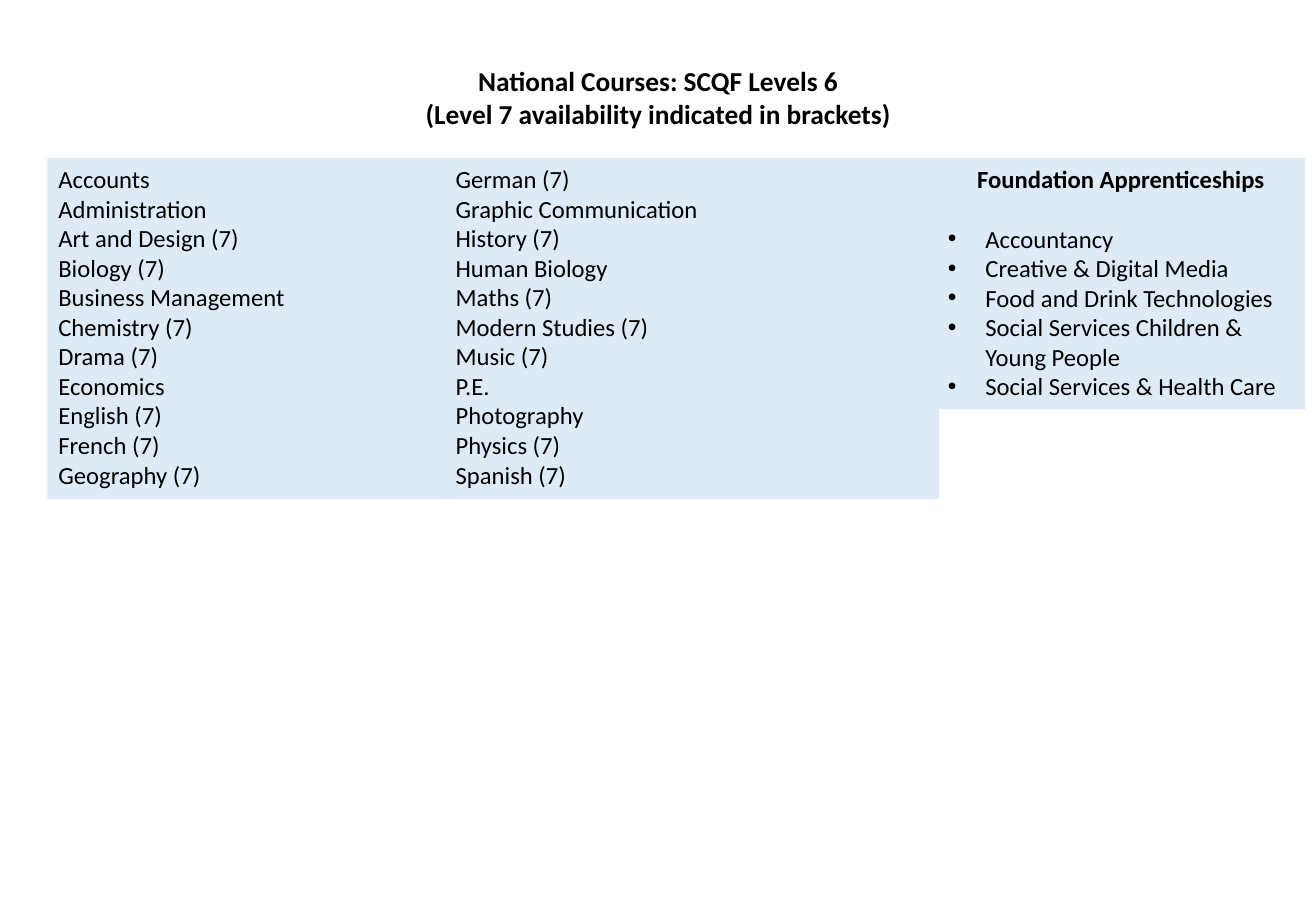
import pptx
import pptx.dml.color
import pptx.enum.shapes
import pptx.enum.text
import pptx.util
import lxml.etree
from pptx.oxml.ns import qn

Inches = pptx.util.Inches
Pt = pptx.util.Pt
CENTER = pptx.enum.text.PP_ALIGN.CENTER

BLACK = pptx.dml.color.RGBColor(0x00, 0x00, 0x00)
PALE_BLUE = pptx.dml.color.RGBColor(0xDE, 0xEB, 0xF7)
FONT = "Calibri"
TITLE_SIZE = 16.2
BODY_SIZE = 14.6

TITLE_LINES = [
    "National Courses: SCQF Levels 6",
    "(Level 7 availability indicated in brackets)",
]
COURSES_A_TO_G = [
    "Accounts", "Administration", "Art and Design (7)", "Biology (7)",
    "Business Management", "Chemistry (7)", "Drama (7)", "Economics",
    "English (7)", "French (7)", "Geography (7)",
]
COURSES_G_TO_S = [
    "German (7)", "Graphic Communication", "History (7)", "Human Biology",
    "Maths (7)", "Modern Studies (7)", "Music (7)", "P.E.", "Photography",
    "Physics (7)", "Spanish (7)",
]
APPRENTICESHIPS = [
    "Accountancy", "Creative & Digital Media", "Food and Drink Technologies",
    "Social Services Children & Young People",
    "Social Services & Health Care",
]


def prepare_frame(shape):
    frame = shape.text_frame
    frame.word_wrap = True
    frame.vertical_anchor = pptx.enum.text.MSO_ANCHOR.TOP
    frame.margin_left = frame.margin_right = Inches(0.09)
    frame.margin_top = frame.margin_bottom = Inches(0.05)
    return frame


def add_panel(slide, box):
    shape = slide.shapes.add_shape(
        pptx.enum.shapes.MSO_SHAPE.RECTANGLE, *map(Inches, box))
    shape.shadow.inherit = False
    shape.fill.solid()
    shape.fill.fore_color.rgb = PALE_BLUE
    shape.line.fill.background()
    return prepare_frame(shape)


def add_lines(frame, lines, size, bold=False,
              alignment=pptx.enum.text.PP_ALIGN.LEFT):
    paragraphs = []
    for text in lines:
        first = frame.paragraphs[0]
        paragraph = frame.add_paragraph() if first.runs else first
        paragraph.alignment = alignment
        run = paragraph.add_run()
        run.text = text
        run.font.name = FONT
        run.font.size = Pt(size)
        run.font.bold = bold
        run.font.color.rgb = BLACK
        paragraphs.append(paragraph)
    return paragraphs


def add_bullet(paragraph, indent):
    properties = paragraph._p.get_or_add_pPr()
    properties.set("marL", str(Inches(indent)))
    properties.set("indent", str(-Inches(indent)))
    lxml.etree.SubElement(properties, qn("a:buFont"), typeface="Arial")
    lxml.etree.SubElement(properties, qn("a:buChar"), char="•")


def add_title(slide, box):
    frame = prepare_frame(slide.shapes.add_textbox(*map(Inches, box)))
    add_lines(frame, TITLE_LINES, TITLE_SIZE, True, CENTER)


def add_course_column(slide, box, courses):
    add_lines(add_panel(slide, box), courses, BODY_SIZE)


def add_apprenticeships(slide, box):
    frame = add_panel(slide, box)
    heading = add_lines(frame, ["Foundation Apprenticeships"],
                        BODY_SIZE, True, CENTER)[0]
    heading.space_after = Pt(17.8)
    for paragraph in add_lines(frame, APPRENTICESHIPS, BODY_SIZE):
        add_bullet(paragraph, 0.31)


def main():
    presentation = pptx.Presentation()
    presentation.slide_width = Inches(10.83)
    presentation.slide_height = Inches(7.5)
    slide = presentation.slides.add_slide(presentation.slide_layouts[6])
    top = 1.3
    add_course_column(slide, (3.66, top, 4.07, 2.81), COURSES_G_TO_S)
    add_course_column(slide, (0.39, top, 3.31, 2.81), COURSES_A_TO_G)
    add_apprenticeships(slide, (7.71, top, 3.03, 2.07))
    add_title(slide, (3.21, 0.48, 4.41, 0.65))
    presentation.save("out.pptx")


if __name__ == "__main__":
    main()
